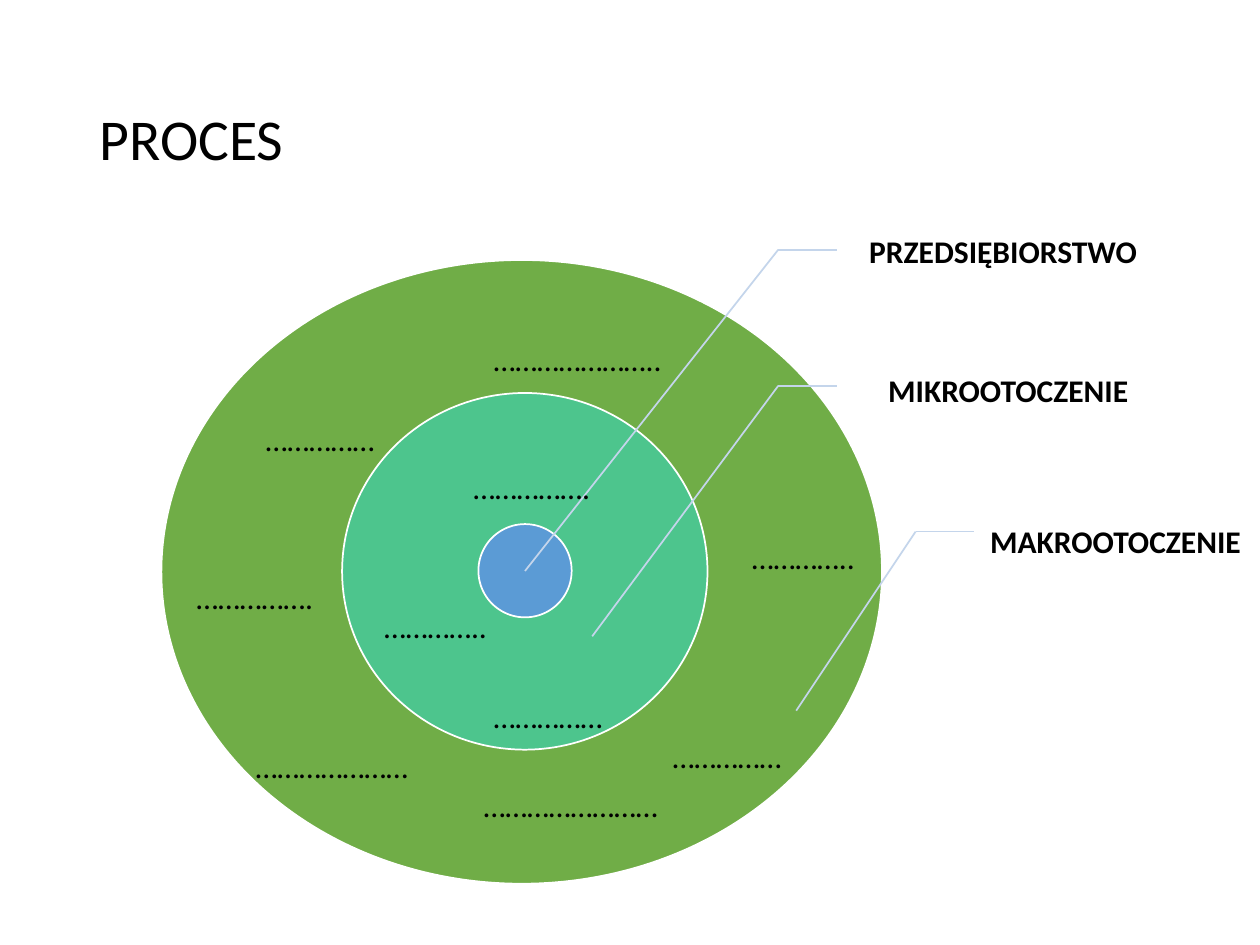
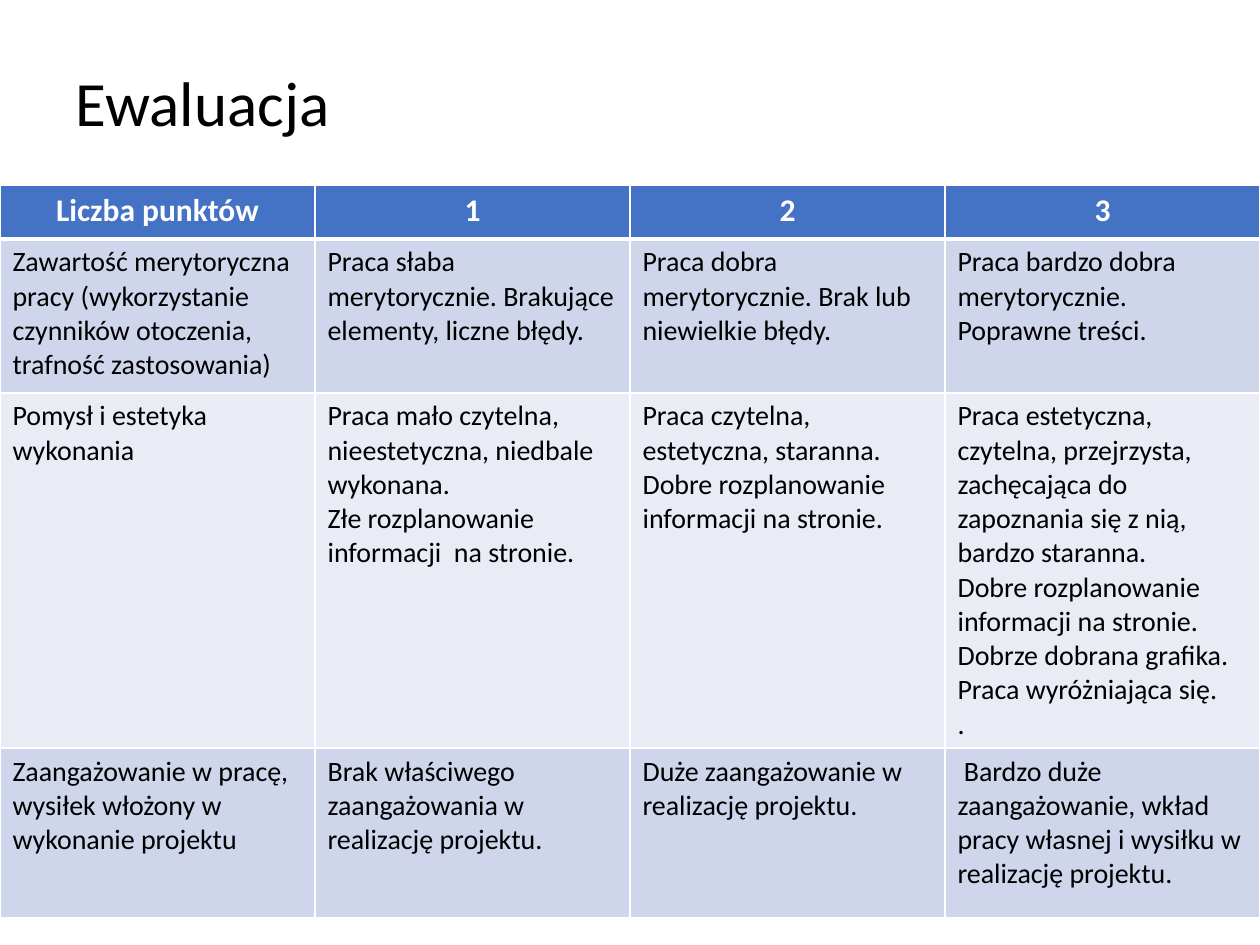
from lxml.etree import SubElement
from pptx import Presentation
from pptx.dml.color import RGBColor
from pptx.enum.shapes import MSO_CONNECTOR, MSO_SHAPE
from pptx.enum.text import MSO_ANCHOR, MSO_AUTO_SIZE, PP_ALIGN
from pptx.oxml.ns import qn
from pptx.util import Pt

FONT = "Calibri"
BLACK, WHITE = "000000", "FFFFFF"
LEADER = "C4D5EB"
HEADER, BAND_DARK, BAND_LIGHT = "4472C4", "CFD5EA", "E9EBF5"


def color(value):
    return RGBColor.from_string(value)


def write(frame, lines, size, ink=BLACK, bold=False, align=PP_ALIGN.LEFT, spacing=None):
    for index, line in enumerate(lines):
        paragraph = frame.add_paragraph() if index else frame.paragraphs[0]
        paragraph.alignment = align
        paragraph.line_spacing = spacing
        run = paragraph.add_run()
        run.text = line
        run.font.name = FONT
        run.font.size = Pt(size)
        run.font.bold = bold
        run.font.color.rgb = color(ink)


presentation = Presentation()
presentation.slide_width = Pt(720)
presentation.slide_height = Pt(540)

titles = [
    ("PROCES", 33, (49.7, 28.8, 620.6, 104.4)),
    ("Ewaluacja", 36, (36, 9.4, 648, 102.2)),
]
slides = []
for text, size, (left, top, width, height) in titles:
    slide = presentation.slides.add_slide(presentation.slide_layouts[5])
    title = slide.shapes.title
    title.left, title.top, title.width, title.height = Pt(left), Pt(top), Pt(width), Pt(height)
    title.text_frame.auto_size = MSO_AUTO_SIZE.NONE
    title.text_frame.vertical_anchor = MSO_ANCHOR.MIDDLE
    write(title.text_frame, [text], size, spacing=0.9)
    slides.append(slide)
process, evaluation = slides

rings = [
    ("70AD47", 92.2, 148.6, 411.8, 356.4),
    ("4DC58D", 195.5, 224.6, 208.8, 203.8),
    ("5B9BD5", 273.4, 299.5, 53.3, 53.3),
]
for fill, left, top, width, height in rings:
    ring = process.shapes.add_shape(MSO_SHAPE.OVAL, Pt(left), Pt(top), Pt(width), Pt(height))
    ring.shadow.inherit = False
    ring.fill.solid()
    ring.fill.fore_color.rgb = color(fill)
    ring.line.color.rgb = color(WHITE)
    ring.line.width = Pt(1)

labels = [
    ("PRZEDSIĘBIORSTWO", (486.7, 105.8, 233.3, 77.8), (444.7, 142.7), (300, 326.3)),
    ("MIKROOTOCZENIE", (497.5, 185, 193, 77.8), (444.7, 220.5), (338.4, 363.6)),
    ("MAKROOTOCZENIE", (555.8, 287.3, 156.2, 46.8), (523.2, 303.8), (455, 406.1)),
]
for text, (left, top, width, height), (bend_x, bend_y), target in labels:
    label = process.shapes.add_textbox(Pt(left), Pt(top), Pt(width), Pt(height))
    frame = label.text_frame
    frame.word_wrap = True
    frame.vertical_anchor = MSO_ANCHOR.MIDDLE
    frame.margin_left = Pt(10)
    frame.margin_top = frame.margin_right = frame.margin_bottom = Pt(2)
    write(frame, [text], 18, bold=True, spacing=0.9)
    for end_x, end_y in [(bend_x + 33.4, bend_y), target]:
        leader = process.shapes.add_connector(
            MSO_CONNECTOR.STRAIGHT, Pt(bend_x), Pt(bend_y), Pt(end_x), Pt(end_y))
        leader.line.color.rgb = color(LEADER)
        leader.line.width = Pt(1)
        SubElement(leader._element.spPr, qn("a:effectLst"))

blanks = [
    ("…………….", 263.5, 264.2, 81.4),
    ("……………", 275, 394.6, 85),
    ("…………..", 212.4, 343.4, 73.4),
    ("…………………..", 275, 190.8, 113),
    ("……………", 144.7, 236.2, 79.2),
    ("…………….", 105.1, 326.9, 85),
    ("…………………", 139, 423.4, 102.2),
    ("……………………", 269.3, 445.7, 118.8),
    ("……………", 377.3, 417.6, 79.2),
    ("…………..", 422.6, 303.8, 73.4),
]
for dots, left, top, width in blanks:
    blank = process.shapes.add_textbox(Pt(left), Pt(top), Pt(width), Pt(28.8))
    blank.text_frame.word_wrap = True
    write(blank.text_frame, [dots], 18)

criteria = [
    [["Liczba punktów"], ["1"], ["2"], ["3"]],
    [
        ["Zawartość merytoryczna pracy (wykorzystanie czynników otoczenia, trafność zastosowania)"],
        ["Praca słaba merytorycznie. Brakujące elementy, liczne błędy."],
        ["Praca dobra merytorycznie. Brak lub niewielkie błędy."],
        ["Praca bardzo dobra merytorycznie. Poprawne treści."],
    ],
    [
        ["Pomysł i estetyka wykonania"],
        ["Praca mało czytelna, nieestetyczna, niedbale wykonana.",
         "Złe rozplanowanie informacji  na stronie."],
        ["Praca czytelna, estetyczna, staranna.",
         "Dobre rozplanowanie informacji na stronie."],
        ["Praca estetyczna, czytelna, przejrzysta, zachęcająca do zapoznania się z nią, "
         "bardzo staranna.",
         "Dobre rozplanowanie informacji na stronie. Dobrze dobrana grafika. "
         "Praca wyróżniająca się.",
         "."],
    ],
    [
        ["Zaangażowanie w pracę, wysiłek włożony w wykonanie projektu"],
        ["Brak właściwego  zaangażowania w realizację projektu."],
        ["Duże zaangażowanie w realizację projektu."],
        [" Bardzo duże zaangażowanie, wkład pracy własnej i wysiłku w realizację projektu."],
    ],
]
row_heights = [31, 88, 203, 97]
row_fills = [HEADER, BAND_DARK, BAND_LIGHT, BAND_DARK]
table = evaluation.shapes.add_table(
    4, 4, Pt(0), Pt(105.6), Pt(720), Pt(sum(row_heights))).table
for column in table.columns:
    column.width = Pt(180)
for row_index, texts in enumerate(criteria):
    table.rows[row_index].height = Pt(row_heights[row_index])
    is_header = row_index == 0
    for column_index, lines in enumerate(texts):
        cell = table.cell(row_index, column_index)
        properties = cell._tc.get_or_add_tcPr()
        for side in "LRTB":
            thick = (row_index, side) in [(0, "B"), (1, "T")]
            border = SubElement(properties, qn("a:ln" + side), w=str(Pt(3 if thick else 1)))
            fill = SubElement(border, qn("a:solidFill"))
            SubElement(fill, qn("a:srgbClr"), val=WHITE)
        cell.fill.solid()
        cell.fill.fore_color.rgb = color(row_fills[row_index])
        if is_header:
            write(cell.text_frame, lines, 18, WHITE, True, PP_ALIGN.CENTER)
        else:
            write(cell.text_frame, lines, 16)

presentation.save("out.pptx")
